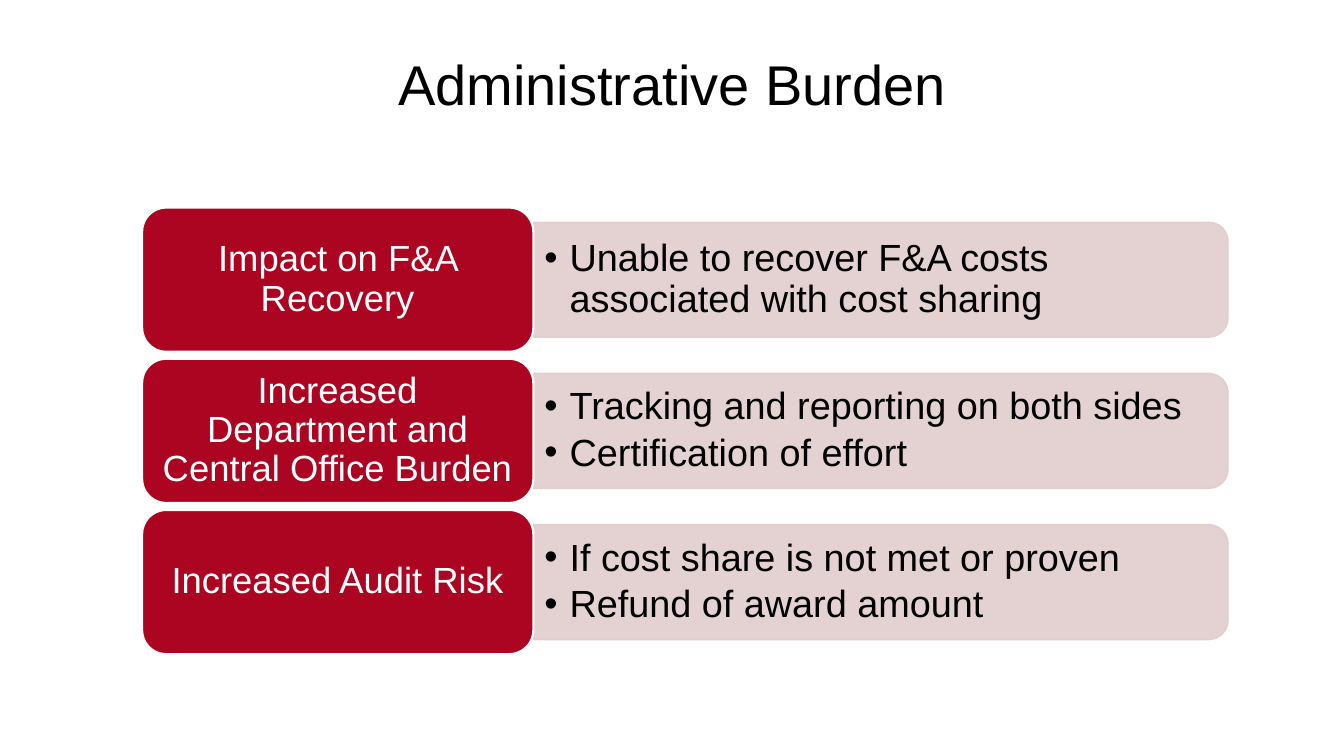
from lxml import etree
from pptx import Presentation
from pptx.dml.color import RGBColor
from pptx.enum.shapes import MSO_SHAPE
from pptx.enum.text import MSO_ANCHOR, PP_ALIGN
from pptx.oxml.ns import qn
from pptx.util import Inches, Pt

ROUND_RECT = MSO_SHAPE.ROUNDED_RECTANGLE
ROUND_TOP = MSO_SHAPE.ROUND_2_SAME_RECTANGLE
TOP, MIDDLE = MSO_ANCHOR.TOP, MSO_ANCHOR.MIDDLE
CENTER, LEFT = PP_ALIGN.CENTER, PP_ALIGN.LEFT

FONT = "Arial"
RED, PINK, WHITE, BLACK = "AB0521", "E2CCCD", "FFFFFF", "000000"
LABEL_X, LABEL_W, LABEL_H = 1.41, 3.88, 1.43
PANEL_X, PANEL_W, PANEL_H = LABEL_X + LABEL_W, 6.89, 1.14
FIRST_Y, ROW_STEP = 2.06, 1.5
ROWS = [
    ("Impact on F&A Recovery",
     ["Unable to recover F&A costs associated with cost sharing"]),
    ("Increased Department and Central Office Burden",
     ["Tracking and reporting on both sides", "Certification of effort"]),
    ("Increased Audit Risk",
     ["If cost share is not met or proven", "Refund of award amount"]),
]


def rgb(color):
    return RGBColor.from_string(color)


def set_frame(tf, anchor, side, edge):
    tf.word_wrap = True
    tf.vertical_anchor = anchor
    tf.margin_left = tf.margin_right = Inches(side)
    tf.margin_top = tf.margin_bottom = Inches(edge)


def add_text(p, text, size, color, align):
    p.alignment = align
    p.line_spacing = 0.9
    r = p.add_run()
    r.text = text
    r.font.name = FONT
    r.font.size = Pt(size)
    r.font.color.rgb = rgb(color)


def add_bullet(p):
    pPr = p._p.get_or_add_pPr()
    pPr.set("marL", str(Inches(0.25)))
    pPr.set("indent", str(Inches(-0.25)))
    etree.SubElement(pPr, qn("a:buFont")).set("typeface", FONT)
    etree.SubElement(pPr, qn("a:buChar")).set("char", "•")


def add_box(s, kind, x, y, w, h, fill, line, line_width):
    sp = s.shapes.add_shape(kind, Inches(x), Inches(y), Inches(w), Inches(h))
    sp.shadow.inherit = False
    sp.fill.solid()
    sp.fill.fore_color.rgb = rgb(fill)
    sp.line.color.rgb = rgb(line)
    sp.line.width = Pt(line_width)
    return sp


def add_panel(s, middle):
    """Add a translucent bar with its two right corners rounded."""
    x = PANEL_X + (PANEL_W - PANEL_H) / 2
    sp = add_box(s, ROUND_TOP, x, middle - PANEL_W / 2, PANEL_H, PANEL_W,
                 PINK, PINK, 1)
    sp.rotation = 90
    for color in sp._element.spPr.iter(qn("a:srgbClr")):
        etree.SubElement(color, qn("a:alpha")).set("val", "90000")


def add_list(s, middle, items):
    h = 1.03
    box = s.shapes.add_textbox(Inches(PANEL_X), Inches(middle - h / 2),
                               Inches(6.84), Inches(h))
    tf = box.text_frame
    set_frame(tf, MIDDLE, 0.11, 0.06)
    for i, item in enumerate(items):
        p = tf.add_paragraph() if i else tf.paragraphs[0]
        add_bullet(p)
        if i:
            p.space_before = Pt(4)
        add_text(p, item, 27, BLACK, LEFT)


def add_label(s, y, text):
    sp = add_box(s, ROUND_RECT, LABEL_X, y, LABEL_W, LABEL_H, RED, WHITE, 1.5)
    set_frame(sp.text_frame, MIDDLE, 0.11, 0.05)
    add_text(sp.text_frame.paragraphs[0], text, 26, WHITE, CENTER)


def add_title(s, text):
    sp = s.shapes.title
    sp.left, sp.top = Inches(0.75), Inches(0.52)
    sp.width, sp.height = Inches(11.83), Inches(1.22)
    set_frame(sp.text_frame, TOP, 0.1, 0.05)
    add_text(sp.text_frame.paragraphs[0], text, 40, BLACK, CENTER)


def main():
    prs = Presentation()
    prs.slide_width, prs.slide_height = Inches(13.33), Inches(7.5)
    s = prs.slides.add_slide(prs.slide_layouts[5])
    add_title(s, "Administrative Burden")
    for i, (label, items) in enumerate(ROWS):
        y = FIRST_Y + i * ROW_STEP
        middle = y + LABEL_H / 2
        add_panel(s, middle)
        add_list(s, middle, items)
        add_label(s, y, label)
    prs.save("out.pptx")


if __name__ == "__main__":
    main()
